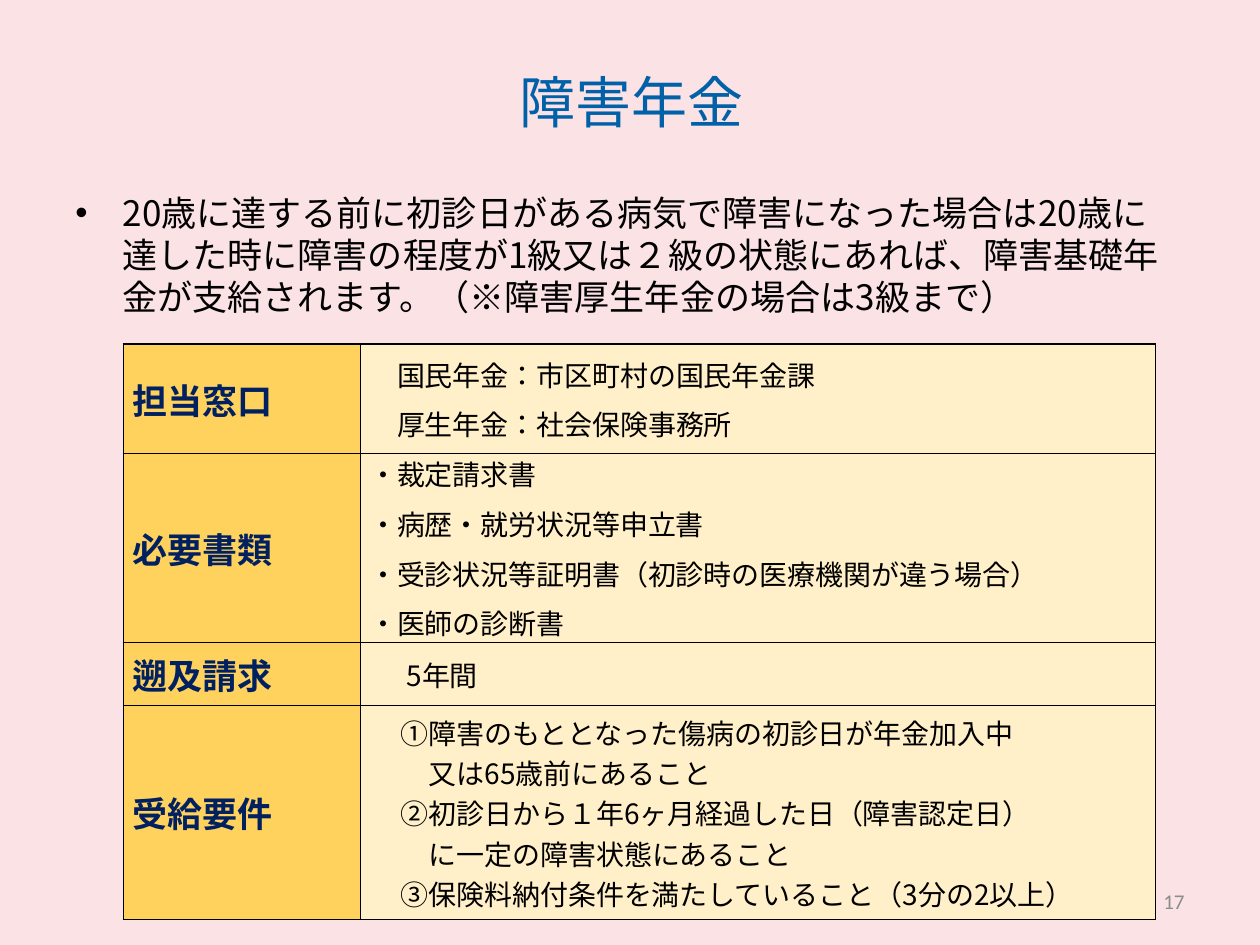
"""Build a slide on disability pensions with a lead sentence and a four-row table."""
import pptx
import pptx.dml.color
import pptx.enum.lang
import pptx.enum.text
import pptx.oxml
import pptx.oxml.ns
import pptx.util
from lxml import etree

RGB = pptx.dml.color.RGBColor
ALIGN = pptx.enum.text.PP_ALIGN
ANCHOR = pptx.enum.text.MSO_ANCHOR
JAPANESE = pptx.enum.lang.MSO_LANGUAGE_ID.JAPANESE
Inches = pptx.util.Inches
Pt = pptx.util.Pt

PINK = RGB(0xFA, 0xE2, 0xE5)
BLUE = RGB(0x00, 0x60, 0xA8)
NAVY = RGB(0x00, 0x20, 0x60)
GOLD = RGB(0xFF, 0xD2, 0x5D)
CREAM = RGB(0xFF, 0xF0, 0xC9)
GREY = RGB(0x8C, 0x8C, 0x8C)
BLACK = RGB(0, 0, 0)
FONT = "Noto Sans CJK JP"

TITLE = "障害年金"
LEAD = (
    "20歳に達する前に初診日がある病気で障害になった場合は20歳に達した時に"
    "障害の程度が1級又は２級の状態にあれば、障害基礎年金が支給されます。"
    "（※障害厚生年金の場合は3級まで）"
)
PAGE_NUMBER = "17"
SPACED = {"align": ALIGN.JUSTIFY, "after": 5.3}
TIGHT_INSETS = (0.07, 0, 0.07, 0)
CELL_INSETS = (0.1, 0.05, 0.1, 0.05)

ROWS = [
    ("担当窓口", 0.87, TIGHT_INSETS, SPACED, [
        (1, "国民年金：市区町村の国民年金課"),
        (1, "厚生年金：社会保険事務所"),
    ]),
    ("必要書類", 1.5, TIGHT_INSETS, SPACED, [
        (0, "・裁定請求書"),
        (0, "・病歴・就労状況等申立書"),
        (0, "・受診状況等証明書（初診時の医療機関が違う場合）"),
        (0, "・医師の診断書"),
    ]),
    ("遡及請求", 0.5, CELL_INSETS, {}, [(1.2, "5年間")]),
    ("受給要件", 1.7, CELL_INSETS, {}, [
        (1, "①障害のもととなった傷病の初診日が年金加入中"),
        (2, "又は65歳前にあること"),
        (1, "②初診日から１年6ヶ月経過した日（障害認定日）"),
        (2, "に一定の障害状態にあること"),
        (1, "③保険料納付条件を満たしていること（3分の2以上）"),
    ]),
]
COLUMNS = (1.88, 6.31)


def write(para, text, size=16, color=BLACK, bold=False, font=FONT,
          align=ALIGN.LEFT, before=0, after=0, indent=0, bullet=None):
    """Fill one paragraph; indent is in ems of its text size."""
    para.alignment = align
    para.space_before, para.space_after = Pt(before), Pt(after)
    span = para.add_run()
    span.text = text
    span.font.size, span.font.bold, span.font.name = Pt(size), bold, font
    span.font.language_id = JAPANESE
    span.font.color.rgb = color
    east = etree.SubElement(span.font._element, pptx.oxml.ns.qn("a:ea"))
    east.set("typeface", font)
    properties = para._p.get_or_add_pPr()
    properties.set("marL", str(int(Pt(size * indent))))
    properties.set("indent", str(-int(Pt(size * indent))) if bullet else "0")
    if bullet:
        etree.SubElement(properties, pptx.oxml.ns.qn("a:buFont")).set("typeface", "Arial")
        etree.SubElement(properties, pptx.oxml.ns.qn("a:buChar")).set("char", bullet)


def add_box(page, place, text, anchor=ANCHOR.MIDDLE, bottom=0.05, **style):
    """Add a wrapped text box with one paragraph."""
    frame = page.shapes.add_textbox(*map(Inches, place)).text_frame
    frame.word_wrap = True
    frame.vertical_anchor = anchor
    frame.margin_bottom = Inches(bottom)
    write(frame.paragraphs[0], text, **style)


def fill_cell(cell, lines, fill, insets, **style):
    """Write the indented lines into a cell, then border and fill it."""
    cell.vertical_anchor = ANCHOR.MIDDLE
    (cell.margin_left, cell.margin_top,
     cell.margin_right, cell.margin_bottom) = map(Inches, insets)
    frame = cell.text_frame
    for number, (indent, text) in enumerate(lines):
        para = frame.add_paragraph() if number else frame.paragraphs[0]
        write(para, text, indent=indent, **style)
    properties = cell._tc.get_or_add_tcPr()
    for side in ("lnL", "lnR", "lnT", "lnB"):
        properties.append(pptx.oxml.parse_xml(
            f'<a:{side} {pptx.oxml.ns.nsdecls("a")} w="{int(Pt(1))}"><a:solidFill>'
            f'<a:srgbClr val="{BLACK}"/></a:solidFill></a:{side}>'))
    cell.fill.solid()
    cell.fill.fore_color.rgb = fill


def add_pension_table(page):
    """Add the table of offices, documents, period and conditions."""
    heights = [row[1] for row in ROWS]
    table = page.shapes.add_table(
        len(ROWS), len(COLUMNS), Inches(0.98), Inches(2.73),
        Inches(sum(COLUMNS)), Inches(sum(heights))).table
    table.first_row = table.horz_banding = False
    for column, width in zip(table.columns, COLUMNS):
        column.width = Inches(width)
    for row, (heading, height, insets, style, lines) in zip(table.rows, ROWS):
        row.height = Inches(height)
        fill_cell(row.cells[0], [(0, heading)], GOLD, TIGHT_INSETS,
                  size=20, color=NAVY, bold=True, **SPACED)
        fill_cell(row.cells[1], lines, CREAM, insets, **style)


def main():
    deck = pptx.Presentation()
    deck.slide_width, deck.slide_height = Inches(10), Inches(7.5)
    page = deck.slides.add_slide(deck.slide_layouts[6])
    page.background.fill.solid()
    page.background.fill.fore_color.rgb = PINK
    add_box(page, (0.51, 0.44, 9, 1.25), TITLE, bottom=0.57,
            size=32, color=BLUE, align=ALIGN.CENTER)
    add_box(page, (0.5, 1.47, 8.83, 5.67), LEAD, anchor=ANCHOR.TOP, size=20,
            before=4, after=10.8, indent=1.35, bullet="•")
    add_pension_table(page)
    add_box(page, (7.17, 6.95, 2.33, 0.4), PAGE_NUMBER, size=12,
            color=GREY, font="Calibri", align=ALIGN.RIGHT)
    deck.save("out.pptx")


if __name__ == "__main__":
    main()
